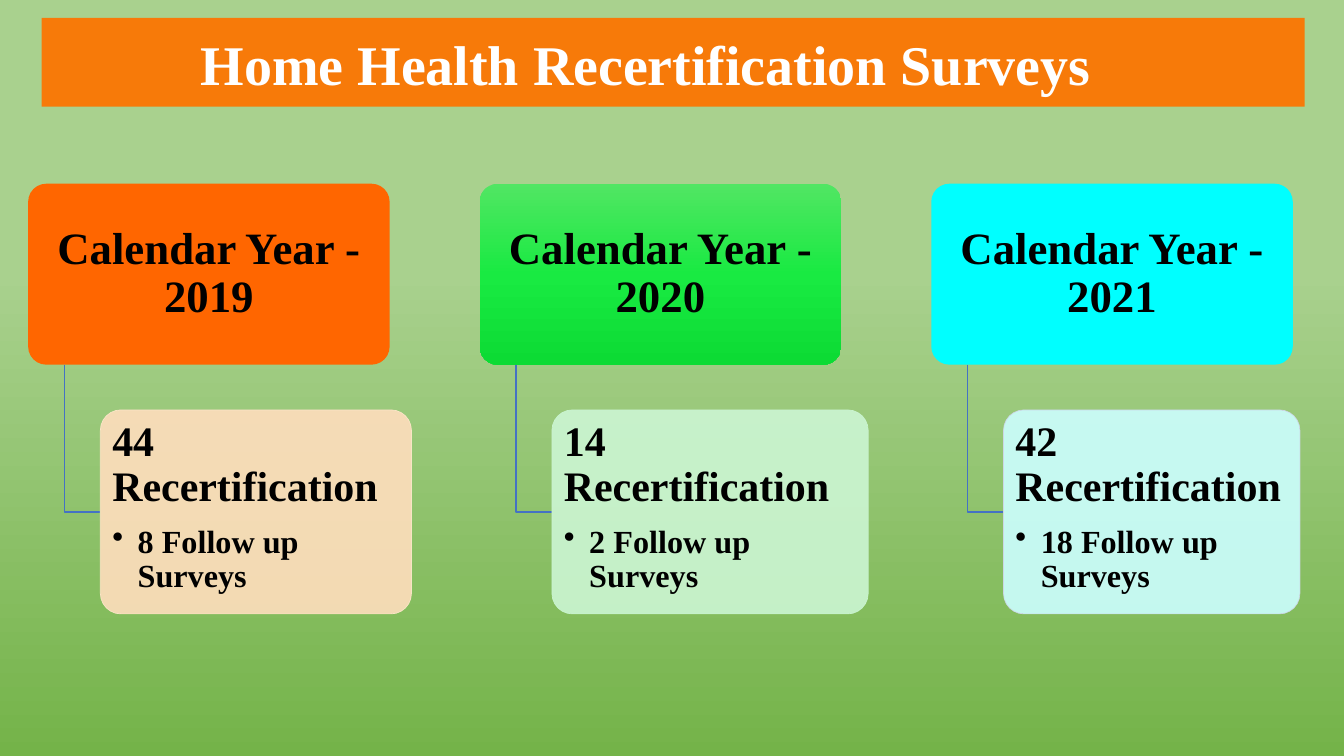
from copy import deepcopy

from lxml import etree
from pptx import Presentation
from pptx.dml.color import RGBColor
from pptx.enum.shapes import MSO_SHAPE
from pptx.enum.text import MSO_ANCHOR, PP_ALIGN
from pptx.oxml.ns import qn
from pptx.util import Cm, Pt

RECT, ROUND = MSO_SHAPE.RECTANGLE, MSO_SHAPE.ROUNDED_RECTANGLE
TOP, MIDDLE, BOTTOM = MSO_ANCHOR.TOP, MSO_ANCHOR.MIDDLE, MSO_ANCHOR.BOTTOM
LEFT, CENTER = PP_ALIGN.LEFT, PP_ALIGN.CENTER
FONT = "Times New Roman"

COLORS = {
    "sky": "A9D18E", "grass": "74B349", "banner": "F77A09",
    "white": "FFFFFF", "black": "000000", "link": "4472C4",
    "orange": "FF6600", "peach": "FFDEBD", "cream": "FFE8CC",
    "lime": "51E663", "green": "19EA42", "deep": "0CDB34", "mint": "CCF6D3",
    "cyan": "00FFFF", "ice": "CCFFFF", "mist": "CFD6EA",
}
GREENS = [(0, "lime"), (0.5, "green"), (1, "deep")]
BACK = [(0, "sky"), (0.36, "sky"), (1, "grass")]

# year, heading fill, count, follow-ups, detail width, detail fill, detail line
YEARS = [
    (2019, "orange", 44, 8, 7.84, "peach", "cream"),
    (2020, GREENS, 14, 2, 7.97, "mint", "mint"),
    (2021, "cyan", 42, 18, 7.47, "ice", "mist"),
]
START, PITCH = 0.71, 11.38
HEAD_TOP, HEAD_W, HEAD_H = 4.63, 9.11, 4.56
NOTE_TOP, NOTE_H = 10.33, 5.14
STEP = 0.91


def rgb(name):
    return RGBColor.from_string(COLORS[name])


def blend(fill, root, stops):
    """Fill from top to bottom through three (position, color) stops."""
    fill.gradient()
    fill.gradient_angle = 270
    items = root.find(".//" + qn("a:gsLst"))
    items.append(deepcopy(items[-1]))
    for stop, (pos, name) in zip(fill.gradient_stops, stops):
        stop.position = pos
        stop.color.rgb = rgb(name)


def fade(shape):
    """Make the fill and line of a shape 90% opaque."""
    for color in shape._element.spPr.iter(qn("a:srgbClr")):
        etree.SubElement(color, qn("a:alpha")).set("val", "90000")


def add_box(slide, kind, x, y, w, h, fill, line=None):
    box = slide.shapes.add_shape(kind, Cm(x), Cm(y), Cm(w), Cm(h))
    box.shadow.inherit = False
    if kind == ROUND:
        box.adjustments[0] = 0.1
    if isinstance(fill, list):
        blend(box.fill, box._element, fill)
    else:
        box.fill.solid()
        box.fill.fore_color.rgb = rgb(fill)
    if line:
        box.line.color.rgb = rgb(line)
        box.line.width = Pt(0.5)
    else:
        box.line.fill.background()
    return box


def set_frame(shape, text, anchor, side, edge):
    frame = shape.text_frame
    frame.text = text
    frame.word_wrap = True
    frame.vertical_anchor = anchor
    frame.margin_left = frame.margin_right = Cm(side)
    frame.margin_top = frame.margin_bottom = Cm(edge)
    return frame.paragraphs


def style(para, size, color="black", align=LEFT, after=0.0):
    para.alignment = align
    para.line_spacing = 0.9
    para.space_after = Pt(after)
    for run in para.runs:
        run.font.name = FONT
        run.font.size = Pt(size)
        run.font.bold = True
        run.font.color.rgb = rgb(color)


def add_bullet(para):
    props = para._p.get_or_add_pPr()
    props.set("marL", str(Cm(0.64)))
    props.set("indent", str(-Cm(0.64)))
    etree.SubElement(props, qn("a:buChar")).set("char", "•")


def add_elbow(slide, x, y, end_x, end_y):
    path = slide.shapes.build_freeform(Cm(x), Cm(y))
    path.add_line_segments([(Cm(x), Cm(end_y)), (Cm(end_x), Cm(end_y))], close=False)
    elbow = path.convert_to_shape()
    elbow.shadow.inherit = False
    elbow.fill.background()
    elbow.line.color.rgb = rgb("link")
    elbow.line.width = Pt(1)


def add_year(slide, x, year, fill, count, follow, width, tint, edge):
    """Add a year heading with its survey counts hung below it."""
    head = add_box(slide, ROUND, x, HEAD_TOP, HEAD_W, HEAD_H, fill)
    title, = set_frame(head, f"Calendar Year - {year}", MIDDLE, 0.18, 0.1)
    style(title, 32, align=CENTER, after=11)

    add_elbow(slide, x + STEP, HEAD_TOP + HEAD_H, x + 2 * STEP, NOTE_TOP + NOTE_H / 2)

    note = add_box(slide, ROUND, x + 2 * STEP, NOTE_TOP, width, NOTE_H, tint, edge)
    fade(note)
    text = f"{count} Recertification\n{follow} Follow up Surveys"
    total, item = set_frame(note, text, TOP, 0.15, 0.1)
    style(total, 30, after=10.5)
    style(item, 23, after=3.5)
    item.level = 1
    add_bullet(item)


def add_title(slide):
    add_box(slide, RECT, 1.05, 0.45, 31.83, 2.24, "banner")
    box = slide.shapes.add_textbox(Cm(0.69), Cm(0.58), Cm(31.17), Cm(2))
    title, = set_frame(box, "Home Health Recertification Surveys", BOTTOM, 0.25, 0.13)
    style(title, 40, "white", CENTER)


def main():
    deck = Presentation()
    deck.slide_width, deck.slide_height = Cm(33.87), Cm(19.05)
    slide = deck.slides.add_slide(deck.slide_layouts[6])
    blend(slide.background.fill, slide._element, BACK)
    for i, year in enumerate(YEARS):
        add_year(slide, START + i * PITCH, *year)
    add_title(slide)
    deck.save("out.pptx")


if __name__ == "__main__":
    main()
